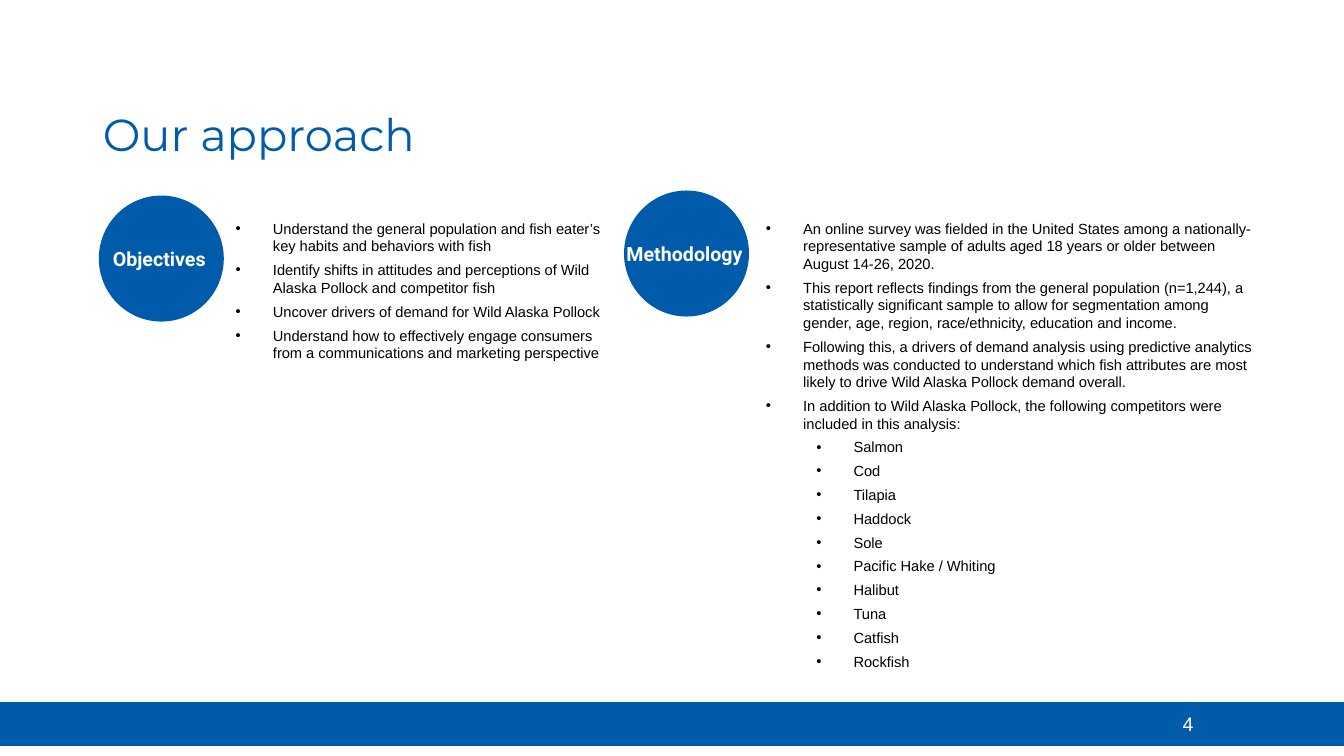
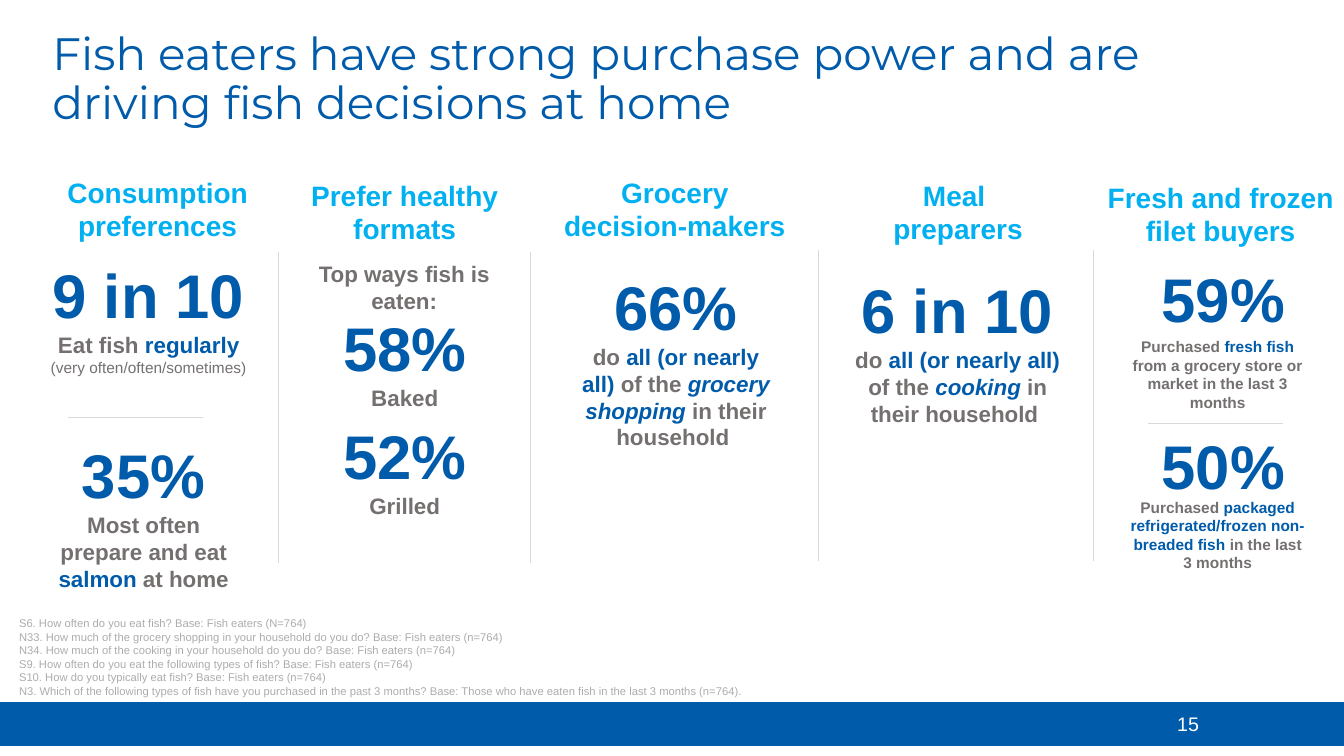
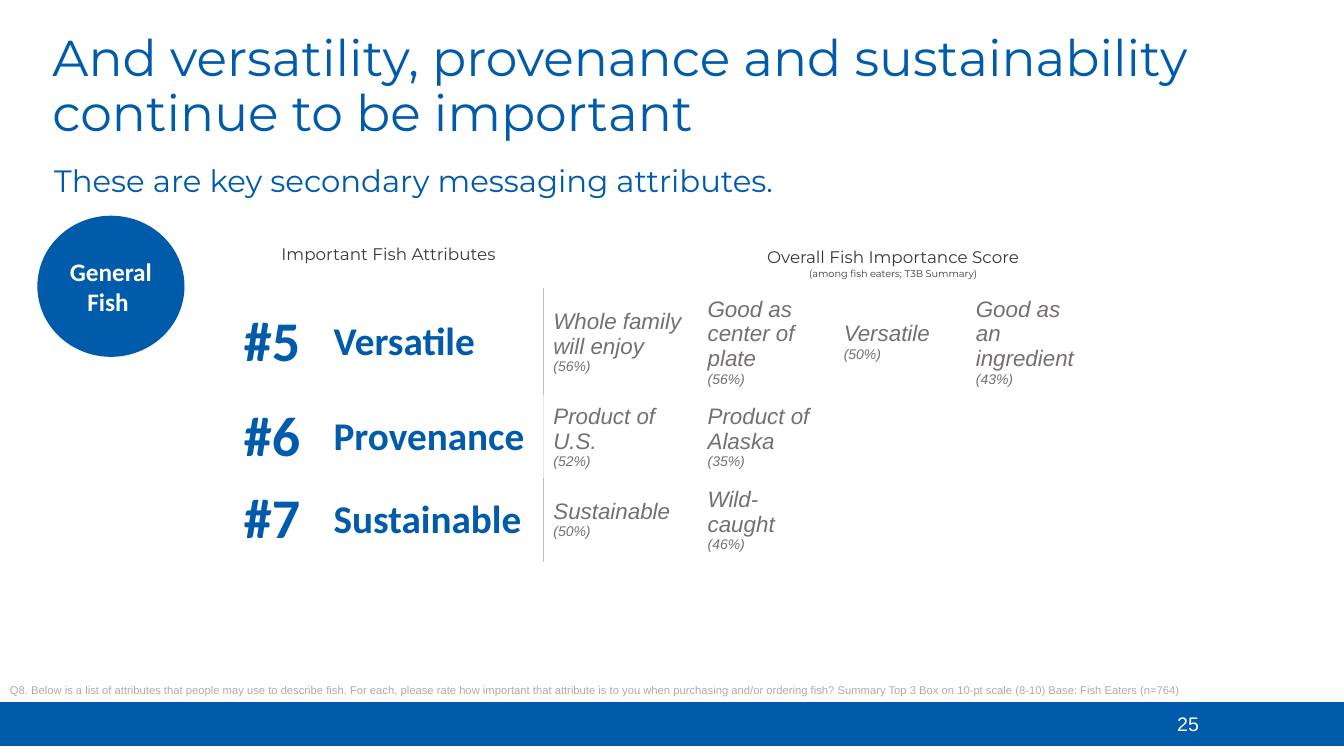
import collections
import pptx
import pptx.dml.color
import pptx.enum.shapes
import pptx.enum.text
import pptx.oxml
import pptx.oxml.ns
import pptx.util

BLUE, SKY, GRAY, PALE, RULE, WHITE = (
    "005BAA", "00B0F0", "757070", "AEABAB", "D9D9D9", "FFFFFF")

Face = collections.namedtuple(
    "Face", "size hue bold slant font", defaults=(False, False, "Arial"))
Anchor = pptx.enum.text.MSO_ANCHOR
Align = pptx.enum.text.PP_ALIGN
Shape = pptx.enum.shapes.MSO_SHAPE

BODY = Face(10.5, "000000")
NOTE = Face(8, PALE)
FOLIO = Face(14, WHITE)
BADGE = Face(14, WHITE, True, font="Roboto")
HEAD = Face(20, SKY, True)
STAT = Face(44, BLUE, True)
TEXT = Face(16, GRAY, True)
KEY = TEXT._replace(hue=BLUE)
SLANT = KEY._replace(slant=True)
SMALL = Face(11, GRAY, True)
MARK = SMALL._replace(hue=BLUE)
CAP = Face(12, "3A3838", font="Montserrat")
RANK = Face(40, BLUE, True, font="Calibri")
TRAIT = RANK._replace(size=28)
ITEM = Face(16, GRAY, slant=True)
SCORE = ITEM._replace(size=10)


def tint(code):
    return pptx.dml.color.RGBColor.from_string(code)


def node(tag, inner="", **attrs):
    pairs = "".join(f' {key}="{val}"' for key, val in attrs.items())
    space = pptx.oxml.ns.nsdecls("a")
    return pptx.oxml.parse_xml(f"<a:{tag} {space}{pairs}>{inner}</a:{tag}>")


class Deck:
    def __init__(self):
        self.show = pptx.Presentation()
        self.show.slide_width = pptx.util.Inches(13.33)
        self.show.slide_height = pptx.util.Inches(7.5)
        self.slide = None

    def wide(self, share):
        return int(self.show.slide_width * share / 100)

    def high(self, share):
        return int(self.show.slide_height * share / 100)

    def area(self, x, y, w, h):
        return self.wide(x), self.high(y), self.wide(w), self.high(h)

    def page(self, title, size, place, number):
        self.slide = self.show.slides.add_slide(self.show.slide_layouts[5])
        bar = self.solid(Shape.RECTANGLE, (0, 92.93, 100, 5.6))
        bar.line.color.rgb = tint(BLUE)
        bar.line.width = pptx.util.Pt(1)
        head = self.slide.shapes.title
        head.left, head.top, head.width, head.height = self.area(*place)
        self.title(head.text_frame, title, size)
        self.text((84.38, 93.47, 8.03, 5.33), [[(number, FOLIO)]], Align.CENTER)

    def title(self, frame, words, size):
        frame.word_wrap = True
        frame.auto_size = pptx.enum.text.MSO_AUTO_SIZE.NONE
        frame.vertical_anchor = Anchor.BOTTOM
        self.fill(frame, [[(words, Face(size, BLUE, font="Montserrat"))]])
        frame.paragraphs[0].line_spacing = 0.9

    def fill(self, frame, paras, align=Align.LEFT):
        for i, parts in enumerate(paras):
            para = frame.add_paragraph() if i else frame.paragraphs[0]
            para.alignment = align
            for words, face in parts:
                run = para.add_run()
                run.text = words
                run.font.size = pptx.util.Pt(face.size)
                run.font.name = face.font
                run.font.bold = face.bold
                run.font.italic = face.slant
                run.font.color.rgb = tint(face.hue)

    def text(self, place, paras, align=Align.LEFT):
        frame = self.slide.shapes.add_textbox(*self.area(*place)).text_frame
        frame.word_wrap = True
        self.fill(frame, paras, align)
        return frame

    def points(self, place, items):
        frame = self.text(place, [[(words, BODY)] for words, level in items])
        for i, (para, item) in enumerate(zip(frame.paragraphs, items)):
            para.level = item[1]
            para.space_before = pptx.util.Pt(2.2 if i else 0)
            para.space_after = pptx.util.Pt(2.2)
            props = para._p.get_or_add_pPr()
            props.set("marL", str(pptx.util.Inches(0.37 + 0.5 * item[1])))
            props.set("indent", str(pptx.util.Inches(-0.37)))
            props.append(node("buFont", typeface="Arial"))
            props.append(node("buChar", char="•"))

    def solid(self, kind, place):
        shape = self.slide.shapes.add_shape(kind, *self.area(*place))
        shape.shadow.inherit = False
        shape.fill.solid()
        shape.fill.fore_color.rgb = tint(BLUE)
        shape.line.fill.background()
        return shape

    def badge(self, x, y, words):
        self.solid(Shape.OVAL, (x, y, 9.3, 16.67))
        self.text((x - 1.87, y + 6.13, 12.75, 3.87), [[(words, BADGE)]], Align.CENTER)

    def line(self, x, y, w, h):
        kind = pptx.enum.shapes.MSO_CONNECTOR.STRAIGHT
        left, top, width, height = self.area(x, y, w, h)
        rule = self.slide.shapes.add_connector(kind, left, top, left + width, top + height)
        rule.line.color.rgb = tint(RULE)
        rule.line.width = pptx.util.Pt(0.5)
        rule._element.spPr.append(node("effectLst"))

    def edge(self, cell, side, hue, size):
        fill = f'<a:solidFill><a:srgbClr val="{hue}"/></a:solidFill>'
        props = cell._tc.get_or_add_tcPr()
        props.append(node(side, fill, w=int(pptx.util.Pt(size))))

    def table(self, x, y, cols, rows):
        place = self.area(x, y, sum(cols), sum(rows))
        grid = self.slide.shapes.add_table(len(rows), len(cols), *place).table
        grid.first_row = grid.horz_banding = False
        for col, share in zip(grid.columns, cols):
            col.width = self.wide(share)
        for row, share in zip(grid.rows, rows):
            row.height = self.high(share)
        return grid

    def cell(self, cell, paras, align=Align.LEFT):
        cell.vertical_anchor = Anchor.MIDDLE
        cell.fill.solid()
        cell.fill.fore_color.rgb = tint(WHITE)
        self.fill(cell.text_frame, paras, align)


def plan(deck):
    deck.page("Our approach", 32, (6.9, 2.67, 86.25, 19.33), "4")
    deck.points((16.8, 28.4, 29.18, 20.13), [
        ("Understand the general population and fish eater’s key habits and behaviors with fish", 0),
        ("Identify shifts in attitudes and perceptions of Wild Alaska Pollock and competitor fish", 0),
        ("Uncover drivers of demand for Wild Alaska Pollock", 0),
        ("Understand how to effectively engage consumers from a communications and marketing perspective", 0),
    ])
    deck.badge(7.35, 25.87, "Objectives")
    deck.badge(46.43, 25.2, "Methodology")
    fish = ("Salmon", "Cod", "Tilapia", "Haddock", "Sole", "Pacific Hake / Whiting",
            "Halibut", "Tuna", "Catfish", "Rockfish")
    deck.points((56.25, 28.4, 38.33, 63.6), [
        ("An online survey was fielded in the United States among a nationally-representative sample of adults aged 18 years or older between August 14-26, 2020.", 0),
        ("This report reflects findings from the general population (n=1,244), a statistically significant sample to allow for segmentation among gender, age, region, race/ethnicity, education and income.", 0),
        ("Following this, a drivers of demand analysis using predictive analytics methods was conducted to understand which fish attributes are most likely to drive Wild Alaska Pollock demand overall.", 0),
        ("In addition to Wild Alaska Pollock, the following competitors were included in this analysis:", 0),
        *[(name, 1) for name in fish],
    ])


def power(deck):
    deck.page("Fish eaters have strong purchase power and are driving fish decisions at home",
              32.4, (3.15, 7.33, 90, 10.4), "15")
    heads = [
        (2.7, 22.53, ["Consumption preferences"]),
        (21.08, 22.93, ["Prefer healthy formats"]),
        (41.18, 22.53, ["Grocery decision-makers"]),
        (62.25, 22.93, ["Meal ", "preparers"]),
        (81.65, 23.2, ["Fresh and frozen filet buyers"]),
    ]
    for x, y, lines in heads:
        deck.text((x, y, 18.35 if x > 80 else 18.07, 10.27),
                  [[(words, HEAD)] for words in lines], Align.CENTER)
    stats = [
        ((2.78, 33.33, 16.57, 17.33), [
            [("9 in 10", STAT)],
            [("Eat fish ", TEXT), ("regularly", KEY)],
            [("(very often/often/sometimes)", SMALL._replace(bold=False))]]),
        ((2.55, 57.2, 16.28, 22), [
            [("35%", STAT)],
            [("Most often prepare and eat ", TEXT), ("salmon", KEY), (" at home", TEXT)]]),
        ((22.43, 33.73, 15.3, 8.53), [[("Top ways fish is eaten:", TEXT)]]),
        ((24.75, 40.4, 10.73, 14.8), [[("58%", STAT)], [("Baked", TEXT)]]),
        ((24.75, 54.67, 10.73, 14.8), [[("52%", STAT)], [("Grilled", TEXT)]]),
        ((42.08, 34.93, 16.43, 25.6), [
            [("66%", STAT)],
            [("do ", TEXT), ("all (or nearly all) ", KEY), ("of the ", TEXT),
             ("grocery shopping ", SLANT), ("in their household ", TEXT)]]),
        ((62.33, 35.33, 17.85, 22), [
            [("6 in 10", STAT)],
            [("do ", TEXT), ("all (or nearly all) ", KEY), ("of the ", TEXT),
             ("cooking", SLANT), (" in their household ", TEXT)]]),
        ((85.5, 33.87, 11.03, 11.2), [[("59%", STAT)]]),
        ((83.18, 44, 14.85, 11.2), [
            [("Purchased ", SMALL), ("fresh fish ", MARK),
             ("from a grocery store or market in the last 3 months", SMALL)]]),
        ((85.5, 56, 11.03, 11.2), [[("50%", STAT)]]),
        ((83.18, 65.2, 14.85, 11.2), [
            [("Purchased ", SMALL), ("packaged refrigerated/frozen non-breaded fish ", MARK),
             ("in the last 3 months", SMALL)]]),
    ]
    for place, paras in stats:
        deck.text(place, paras, Align.CENTER)
    for x, y in ((20.7, 33.33), (39.45, 33.33), (60.9, 33.07), (81.38, 33.07)):
        deck.line(x, y, 0, 41.1)
    for x, y in ((5.03, 55.2), (85.43, 56)):
        deck.line(x, y, 10.05, 0)
    notes = (
        "S6. How often do you eat fish? Base: Fish eaters (N=764)",
        "N33. How much of the grocery shopping in your household do you do? Base: Fish eaters (n=764)",
        "N34. How much of the cooking in your household do you do? Base: Fish eaters (n=764)",
        "S9. How often do you eat the following types of fish? Base: Fish eaters (n=764)",
        "S10. How do you typically eat fish? Base: Fish eaters (n=764)",
        "N3. Which of the following types of fish have you purchased in the past 3 months? Base: Those who have eaten fish in the last 3 months (n=764).",
    )
    deck.text((0.68, 80.93, 79.58, 12.13), [[(words, NOTE)] for words in notes])


def traits(deck):
    deck.page("And versatility, provenance and sustainability continue to be important",
              36, (3.15, 0, 90.83, 19.47), "25")
    grid = deck.table(17.4, 31.6, (6.68, 16.35, 11.48, 10.13, 9.83, 9.75, 10.88),
                      (6.53, 13.33, 10.93, 10.93))
    grid.cell(0, 0).merge(grid.cell(0, 1))
    grid.cell(0, 2).merge(grid.cell(0, 6))
    deck.cell(grid.cell(0, 0), [[("Important Fish Attributes", CAP)]], Align.CENTER)
    grid.cell(0, 0).margin_bottom = pptx.util.Inches(0.23)
    deck.cell(grid.cell(0, 2), [
        [("Overall Fish Importance Score", CAP)],
        [("(among fish eaters; T3B Summary)", CAP._replace(size=7))]], Align.CENTER)
    rows = [
        ("#5", "Versatile", "BFBFBF", 0.75, [
            ("Whole family will enjoy", "(56%)"), ("Good as center of plate", "(56%)"),
            ("Versatile", "(50%)"), ("Good as an ingredient", "(43%)")]),
        ("#6", "Provenance", "E7E6E6", 1, [
            ("Product of U.S.", "(52%)"), ("Product of Alaska", "(35%)")]),
        ("#7", "Sustainable", "BFBFBF", 0.75, [
            ("Sustainable", "(50%)"), ("Wild-caught", "(46%)")]),
    ]
    for i, (rank, trait, hue, size, items) in enumerate(rows, 1):
        deck.edge(grid.cell(i, 1), "lnR", hue, size)
        deck.edge(grid.cell(i, 2), "lnL", hue, size)
        cells = [[[(rank, RANK)]], [[(trait, TRAIT)]]]
        cells += [[[(item, ITEM)], [(score, SCORE)]] for item, score in items]
        cells += [[]] * (7 - len(cells))
        for j, paras in enumerate(cells):
            deck.cell(grid.cell(i, j), paras)
    deck.text((0, 89.73, 89.85, 3.2), [[(
        "Q8. Below is a list of attributes that people may use to describe fish. For each, please rate how important that attribute is to you when purchasing and/or ordering fish? Summary Top 3 Box on 10-pt scale (8-10) Base: Fish Eaters (n=764)", NOTE)]])
    deck.title(deck.text((3.3, 21.2, 93.45, 5.87), []),
               "These are key secondary messaging attributes.", 22)
    disc = deck.solid(Shape.OVAL, (2.78, 28.53, 10.95, 18.67)).text_frame
    disc.word_wrap = True
    disc.vertical_anchor = Anchor.MIDDLE
    deck.fill(disc, [[("General Fish ", Face(18, WHITE, True, font="Calibri"))]], Align.CENTER)


def main():
    deck = Deck()
    plan(deck)
    power(deck)
    traits(deck)
    deck.show.save("out.pptx")


if __name__ == "__main__":
    main()
